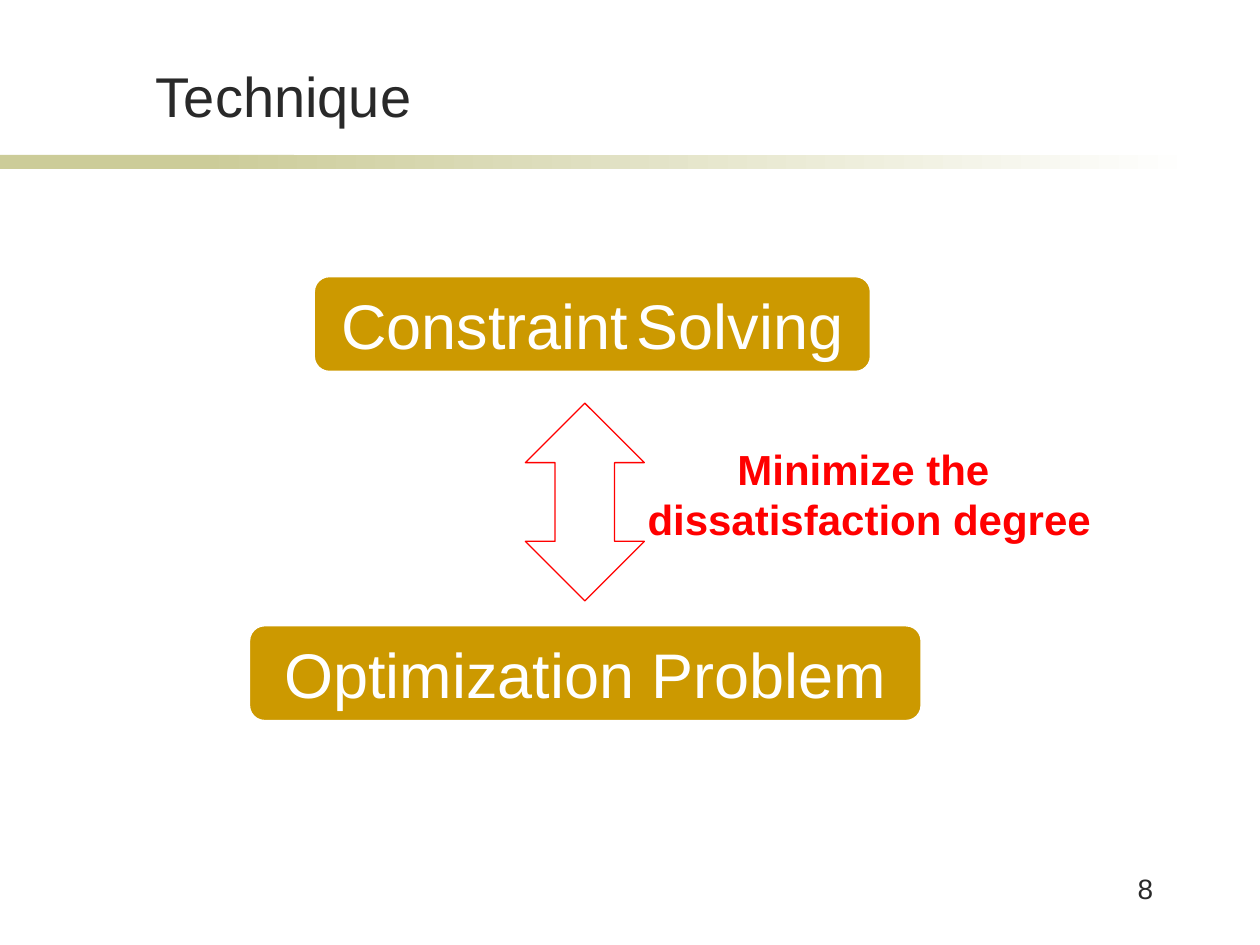
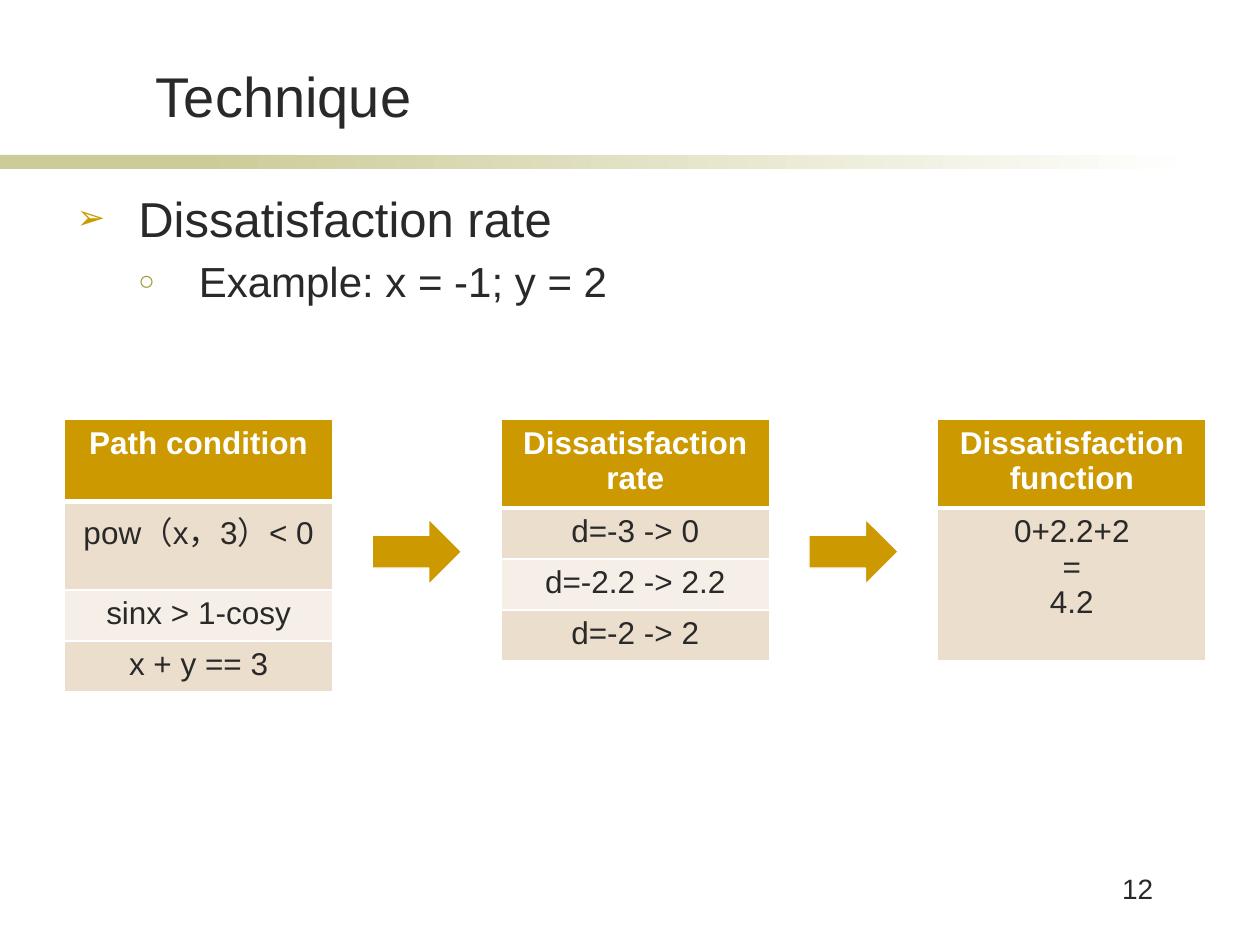
import pptx
import pptx.dml.color
import pptx.enum.shapes
import pptx.enum.text
import pptx.oxml
import pptx.oxml.ns
import pptx.util

Pt = pptx.util.Pt
SHAPES = pptx.enum.shapes.MSO_SHAPE
ALIGN = pptx.enum.text.PP_ALIGN
ANCHOR = pptx.enum.text.MSO_ANCHOR

FONT = "Arial"
INK = "292929"
WHITE = "FFFFFF"
GOLD = "CC9900"
OLIVE = "999933"
BAND = "CCCC99"
RED = "FF0000"
ROW_FILLS = ["ECDECC", "F6EFE7"]


def rgb(hex_color):
    return pptx.dml.color.RGBColor.from_string(hex_color)


def add_element(parent, tag, content="", **attributes):
    values = " ".join(f'{name}="{value}"' for name, value in attributes.items())
    namespace = pptx.oxml.ns.nsdecls("a")
    element = pptx.oxml.parse_xml(f"<a:{tag} {namespace} {values}>{content}</a:{tag}>")
    parent.append(element)


def add_run(paragraph, text, size, color=INK, bold=False):
    run = paragraph.add_run()
    run.text = text
    run.font.name = FONT
    run.font.size = Pt(size)
    run.font.bold = bold
    run.font.color.rgb = rgb(color)


def fill_lines(frame, lines, size, color=INK, bold=False, align=ALIGN.CENTER):
    for index, line in enumerate(lines):
        paragraph = frame.add_paragraph() if index else frame.paragraphs[0]
        paragraph.alignment = align
        add_run(paragraph, line, size, color, bold)


def add_text_box(slide, left, top, width, height, anchor=ANCHOR.TOP, wrap=True):
    box = slide.shapes.add_textbox(Pt(left), Pt(top), Pt(width), Pt(height))
    box.text_frame.word_wrap = wrap
    box.text_frame.vertical_anchor = anchor
    return box.text_frame


def add_shape(slide, kind, left, top, width, height, fill, line=None, line_width=0.75):
    shape = slide.shapes.add_shape(kind, Pt(left), Pt(top), Pt(width), Pt(height))
    shape.shadow.inherit = False
    shape.fill.solid()
    shape.fill.fore_color.rgb = rgb(fill)
    if line:
        shape.line.color.rgb = rgb(line)
        shape.line.width = Pt(line_width)
    else:
        shape.line.fill.background()
    return shape


def add_base_slide(presentation, title, number):
    slide = presentation.slides.add_slide(presentation.slide_layouts[6])
    add_shape(slide, SHAPES.RECTANGLE, 0, 88.5, 168, 8, BAND)
    fade = add_shape(slide, SHAPES.RECTANGLE, 114, 88.5, 570, 8, BAND)
    fade.fill.gradient()
    fade.fill.gradient_angle = 0
    for stop, color in zip(fade.fill.gradient_stops, [BAND, WHITE]):
        stop.color.rgb = rgb(color)
    title_frame = add_text_box(slide, 82, 31.7, 442, 45.4, ANCHOR.BOTTOM)
    fill_lines(title_frame, [title], 32, align=ALIGN.LEFT)
    number_frame = add_text_box(slide, 592.5, 494.6, 73.5, 36)
    fill_lines(number_frame, [number], 16, align=ALIGN.RIGHT)
    return slide


def add_concept(slide, left, top, width, pieces):
    shape = add_shape(slide, SHAPES.ROUNDED_RECTANGLE, left, top, width, 55.4, GOLD, WHITE, 2)
    frame = shape.text_frame
    frame.word_wrap = False
    frame.vertical_anchor = ANCHOR.MIDDLE
    paragraph = frame.paragraphs[0]
    paragraph.alignment = ALIGN.CENTER
    for text, size in pieces:
        add_run(paragraph, text, size, WHITE)


def add_bullet(paragraph, text, size, symbol, color, scale, margin, hanging):
    properties = paragraph._p.get_or_add_pPr()
    properties.set("marL", str(Pt(margin)))
    properties.set("indent", str(-Pt(hanging)))
    add_element(properties, "buClr", f'<a:srgbClr val="{color}"/>')
    add_element(properties, "buSzPct", val=scale * 1000)
    add_element(properties, "buFont", typeface=FONT)
    add_element(properties, "buChar", char=symbol)
    add_run(paragraph, text, size)


def style_cell(cell, lines, fill, color=INK, bold=False, bottom=1):
    cell.fill.solid()
    cell.fill.fore_color.rgb = rgb(fill)
    fill_lines(cell.text_frame, lines, 18, color, bold)
    properties = cell._tc.get_or_add_tcPr()
    widths = {"lnL": 1, "lnR": 1, "lnT": 1, "lnB": bottom}
    for index, (side, width) in enumerate(widths.items()):
        add_element(properties, side,
                    f'<a:solidFill><a:srgbClr val="{WHITE}"/></a:solidFill>', w=Pt(width))
        properties.insert(index, properties[-1])


def add_step_table(slide, left, top, width, header, rows, row_height):
    height = 46.8 + row_height * len(rows)
    table = slide.shapes.add_table(
        len(rows) + 1, 1, Pt(left), Pt(top), Pt(width), Pt(height)).table
    table.horz_banding = False
    table.rows[0].height = Pt(46.8)
    style_cell(table.cell(0, 0), [header], GOLD, WHITE, True, 3)
    for index, lines in enumerate(rows):
        table.rows[index + 1].height = Pt(row_height)
        style_cell(table.cell(index + 1, 0), lines, ROW_FILLS[index % 2])


def build_overview(presentation):
    slide = add_base_slide(presentation, "Technique", "8")
    add_concept(slide, 179, 157.5, 319, [("Constraint", 36), (" ", 18), ("Solving", 36)])
    add_shape(slide, SHAPES.UP_DOWN_ARROW, 300.2, 230.4, 68, 113, WHITE, RED)
    add_concept(slide, 142, 357, 385, [("Optimization Problem", 36)])
    caption = add_text_box(slide, 361.4, 249.8, 270.7, 65.5, wrap=False)
    fill_lines(caption, ["Minimize the ", "dissatisfaction degree "], 24, RED, True)


def build_example(presentation):
    slide = add_base_slide(presentation, "Technique", "12")
    frame = add_text_box(slide, 36.7, 104, 683, 109)
    add_bullet(frame.paragraphs[0], "Dissatisfaction rate", 28, "➢", GOLD, 70, 35.3, 35.3)
    example = frame.add_paragraph()
    example.level = 1
    example.space_before = Pt(4.8)
    add_bullet(example, "Example: x = -1; y = 2", 24, "○", OLIVE, 65, 69.8, 34.5)

    steps = [
        ("Path condition", [["pow（x，3）< 0"], ["sinx > 1-cosy"], ["x + y == 3"]], 29.2),
        ("Dissatisfaction rate", [["d=-3 -> 0"], ["d=-2.2 -> 2.2"], ["d=-2 -> 2"]], 29.2),
        ("Dissatisfaction function", [["0+2.2+2", "=", "4.2"]], 87.6),
    ]
    first_left, pitch, width, arrow_width = 36.8, 249.5, 153.4, 51
    for index, (header, rows, row_height) in enumerate(steps):
        left = first_left + index * pitch
        add_step_table(slide, left, 239.8, width, header, rows, row_height)
        if index:
            arrow_left = left - (pitch - width + arrow_width) / 2
            add_shape(slide, SHAPES.RIGHT_ARROW, arrow_left, 296.6, arrow_width, 37.4,
                      GOLD, WHITE)


def main():
    presentation = pptx.Presentation()
    presentation.slide_width = Pt(720)
    presentation.slide_height = Pt(540)
    build_overview(presentation)
    build_example(presentation)
    presentation.save("out.pptx")


if __name__ == "__main__":
    main()
